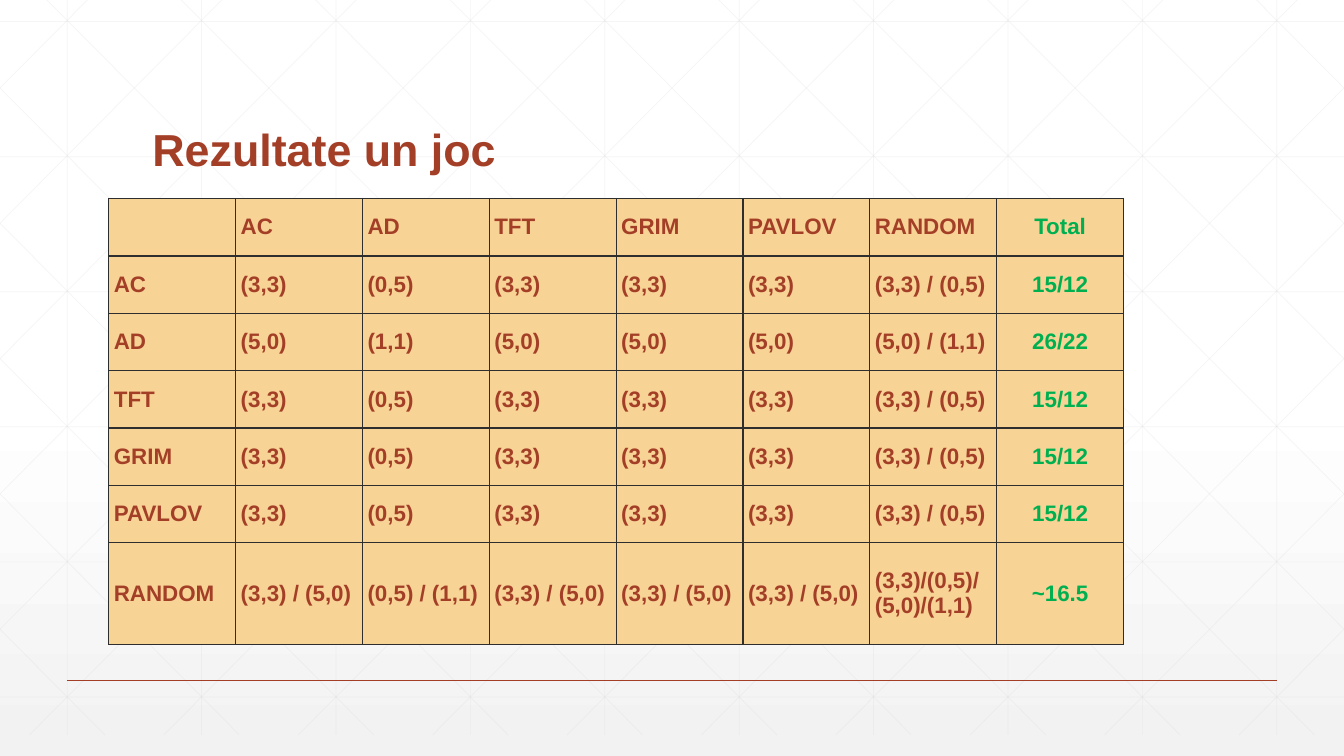
import copy
from typing import Iterator, NamedTuple

import pptx
import pptx.dml.color
import pptx.enum.shapes
import pptx.enum.text
import pptx.oxml
import pptx.oxml.ns
import pptx.util
from lxml import etree

RUST = pptx.dml.color.RGBColor(0xA4, 0x3F, 0x27)
GREEN = pptx.dml.color.RGBColor(0x00, 0xB0, 0x50)
SAND = pptx.dml.color.RGBColor(0xF8, 0xD3, 0x96)
INK = pptx.dml.color.RGBColor(0x2D, 0x2E, 0x2D)
MESH = pptx.dml.color.RGBColor(0xD9, 0xD9, 0xD9)
WHITE = pptx.dml.color.RGBColor(0xFF, 0xFF, 0xFF)
MIST = pptx.dml.color.RGBColor(0xF2, 0xF2, 0xF2)

# Grid of the slide: ten columns across, rows of nearly the same length
SLIDE_WIDTH = pptx.util.Inches(40 / 3)
SLIDE_HEIGHT = pptx.util.Inches(7.5)
COLUMNS = 10
COLUMN = SLIDE_WIDTH / COLUMNS
ROW = pptx.util.Inches(1.34)
MESH_TOP, MESH_BOTTOM = -0.16, 5.44
DIAGONAL_START, DIAGONAL_RUN = 0.19, 5.59

FONT = "Arial"
NAMES = ["AC", "AD", "TFT", "GRIM", "PAVLOV", "RANDOM"]


class Segment(NamedTuple):
    """A straight line in grid columns and rows."""
    x1: float
    y1: float
    x2: float
    y2: float


class Result(NamedTuple):
    scores: list[str]
    total: str


COOPERATIVE = Result(
    ["(3,3)", "(0,5)", "(3,3)", "(3,3)", "(3,3)", "(3,3) / (0,5)"], "15/12")
DEFECTING = Result(
    ["(5,0)", "(1,1)", "(5,0)", "(5,0)", "(5,0)", "(5,0) / (1,1)"], "26/22")
RANDOM = Result(
    ["(3,3) / (5,0)", "(0,5) / (1,1)", "(3,3) / (5,0)", "(3,3) / (5,0)",
     "(3,3) / (5,0)", "(3,3)/(0,5)/\n(5,0)/(1,1)"], "~16.5")
RESULTS = [COOPERATIVE, DEFECTING, COOPERATIVE, COOPERATIVE, COOPERATIVE, RANDOM]


def across(columns: float) -> int:
    return round(columns * COLUMN)


def down(rows: float) -> int:
    return round(rows * ROW)


def mesh_segments() -> Iterator[Segment]:
    for index in range(COLUMNS):
        yield Segment(index + 0.5, MESH_TOP, index + 0.5, MESH_BOTTOM)
    for index in range(6):
        yield Segment(0, index + 0.16, COLUMNS, index + 0.16)
    slope = (MESH_BOTTOM - MESH_TOP) / DIAGONAL_RUN
    for index in range(-5, COLUMNS):
        # Each diagonal is cut at the slide's sides, then mirrored
        start = DIAGONAL_START + index
        left, right = max(start, 0), min(start + DIAGONAL_RUN, COLUMNS)
        upper = MESH_TOP + (left - start) * slope
        lower = MESH_TOP + (right - start) * slope
        yield Segment(left, upper, right, lower)
        yield Segment(COLUMNS - left, upper, COLUMNS - right, lower)


def draw_line(shapes, segment: Segment, color: pptx.dml.color.RGBColor,
              width: float, opacity: int = 100) -> None:
    line = shapes.add_connector(
        pptx.enum.shapes.MSO_CONNECTOR.STRAIGHT,
        across(segment.x1), down(segment.y1), across(segment.x2), down(segment.y2))
    line.line.color.rgb = color
    line.line.width = pptx.util.Pt(width)
    properties = line.element.spPr
    if opacity < 100:
        shade = properties.find(".//" + pptx.oxml.ns.qn("a:srgbClr"))
        etree.SubElement(shade, pptx.oxml.ns.qn("a:alpha"), val=str(opacity * 1000))
    etree.SubElement(properties, pptx.oxml.ns.qn("a:effectLst"))


def add_span(para, text: str, size: float, color: pptx.dml.color.RGBColor) -> None:
    span = para.add_run()
    span.text = text
    span.font.name = FONT
    span.font.size = pptx.util.Pt(size)
    span.font.bold = True
    span.font.color.rgb = color


def draw_background(page) -> None:
    fill = page.background.fill
    fill.gradient()
    fill.gradient_angle = 270
    stops = page.element.find(".//" + pptx.oxml.ns.qn("a:gsLst"))
    stops.insert(1, copy.deepcopy(stops[0]))
    for stop, position, color in zip(
            fill.gradient_stops, (0, 0.53, 1), (WHITE, WHITE, MIST)):
        stop.position = position
        stop.color.rgb = color


def draw_title(page) -> None:
    box = page.shapes.add_textbox(across(1.06), down(0.41), across(7.88), down(0.93))
    frame = box.text_frame
    frame.word_wrap = True
    frame.vertical_anchor = pptx.enum.text.MSO_ANCHOR.BOTTOM
    para = frame.paragraphs[0]
    para.line_spacing = 0.9
    add_span(para, "Rezultate un joc", 32, RUST)


def style_cell(cell) -> None:
    properties = cell._tc.get_or_add_tcPr()
    for side in "LRTB":
        properties.append(pptx.oxml.parse_xml(
            f'<a:ln{side} {pptx.oxml.ns.nsdecls("a")} w="12700"><a:solidFill>'
            f'<a:srgbClr val="{INK}"/></a:solidFill></a:ln{side}>'))
    cell.fill.solid()
    cell.fill.fore_color.rgb = SAND
    cell.vertical_anchor = pptx.enum.text.MSO_ANCHOR.MIDDLE
    cell.margin_left = cell.margin_right = pptx.util.Inches(0.05)
    cell.margin_top = cell.margin_bottom = pptx.util.Inches(0.02)


def draw_results(page) -> None:
    lines = [["", *NAMES, "Total"]]
    lines += [[name, *result.scores, result.total]
              for name, result in zip(NAMES, RESULTS)]
    last_row, last_column = len(lines) - 1, len(lines[0]) - 1
    table = page.shapes.add_table(
        len(lines), len(lines[0]),
        across(0.81), down(1.47), across(7.55), down(3.3)).table
    for column in table.columns:
        column.width = across(7.55 / len(lines[0]))
    for row_index, line in enumerate(lines):
        table.rows[row_index].height = down(
            0.75 if row_index == last_row else 2.55 / last_row)
        for column_index, text in enumerate(line):
            cell = table.cell(row_index, column_index)
            style_cell(cell)
            is_total = column_index == last_column
            for number, part in enumerate(text.split("\n") if text else []):
                frame = cell.text_frame
                para = frame.add_paragraph() if number else frame.paragraphs[0]
                if is_total:
                    para.alignment = pptx.enum.text.PP_ALIGN.CENTER
                add_span(para, part, 16, GREEN if is_total else RUST)


def main() -> None:
    deck = pptx.Presentation()
    deck.slide_width, deck.slide_height = SLIDE_WIDTH, SLIDE_HEIGHT
    page = deck.slides.add_slide(deck.slide_layouts[6])

    # Backdrop
    draw_background(page)
    mesh = page.shapes.add_group_shape()
    for segment in mesh_segments():
        draw_line(mesh.shapes, segment, MESH, 0.5, opacity=25)
    draw_line(page.shapes, Segment(0.5, 5.04, 9.5, 5.04), RUST, 1)

    # Content
    draw_title(page)
    draw_results(page)
    deck.save("out.pptx")


if __name__ == "__main__":
    main()
